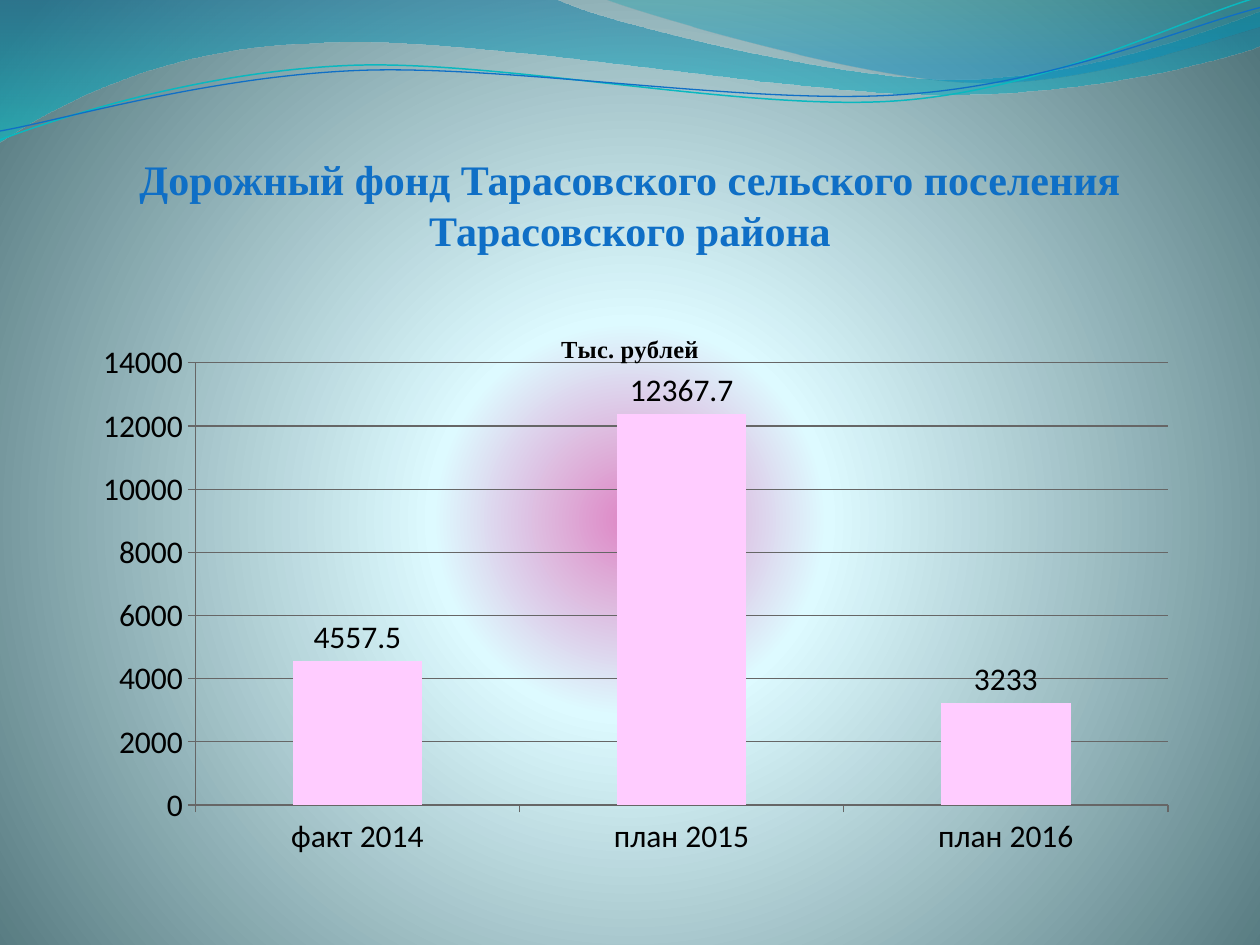
from lxml import etree
from pptx import Presentation
from pptx import util as u
from pptx.chart.data import CategoryChartData
from pptx.dml.color import RGBColor
from pptx.enum import chart as ch, text as tx
from pptx.oxml import parse_xml
from pptx.oxml.ns import nsdecls, qn

COLORS = {
    "title": "0F6FC6", "teal_line": "0AB8BF", "bar": "FFCCFF",
    "axis": "666666", "ink": "000000",
    "glow": "DE86C5", "ice": "DDFAFF", "edge": "52767C",
    "deep": "0074A1", "aqua": "00C6CF", "sea": "00A1A9", "sky": "008BBF",
}
INCH = 2.54  # centimetres

# Wave outlines in inches: a start point, then line ends (2 numbers)
# or cubic curves (6 numbers)
WIDE_WAVE = [
    (0, 0), (4.4, -0.01),
    (4.76, 0.17, 6.64, 0.63, 7.58, 0.63), (8.53, 0.63, 9.58, 0.26, 10, 0.09),
    (10.01, 0.36),
    (9.83, 0.44, 8.7, 0.76, 7.46, 0.75), (6.22, 0.75, 3.82, 0.28, 2.57, 0.34),
    (1.29, 0.36, 0.46, 0.83, -0.01, 1.13), (0, 0),
]
RIGHT_WAVE = [
    (4.79, -0.01),
    (5.09, 0.11, 6.82, 0.62, 7.69, 0.65), (8.56, 0.69, 9.61, 0.32, 10, 0.21),
    (10, 0), (4.79, -0.01),
]
TEAL_STRAND = [
    (0, 1.11), (0.48, 0.93, 1.58, 0.57, 2.77, 0.52),
    (3.95, 0.47, 5.93, 0.89, 7.13, 0.8), (8.33, 0.71, 9.38, 0.15, 9.98, -0.02),
]
BLUE_STRAND = [
    (0, 1.04), (0.47, 0.96, 1.64, 0.61, 2.83, 0.56),
    (4.03, 0.51, 5.97, 0.84, 7.17, 0.75), (8.36, 0.67, 9.41, 0.21, 10, 0.06),
]


def inches(value):
    return u.Cm(value * INCH)


def gradient(stops, direction):
    """Build a gradient fill from (position, colour, opacity) stops."""
    marks = "".join(
        f'<a:gs pos="{pos * 1000}"><a:srgbClr val="{COLORS[color]}">'
        f'<a:alpha val="{opacity * 1000}"/></a:srgbClr></a:gs>'
        for pos, color, opacity in stops)
    return parse_xml(f'<a:gradFill {nsdecls("a")} rotWithShape="1">'
                     f'<a:gsLst>{marks}</a:gsLst>{direction}</a:gradFill>')


def style_font(font, size=18, name="Calibri", color="ink", bold=False):
    font.size = u.Pt(size)
    font.name = name
    font.bold = bold
    font.color.rgb = RGBColor.from_string(COLORS[color])


def write(frame, words, align=tx.PP_ALIGN.CENTER, **style):
    """Put one formatted paragraph in a text frame."""
    para = frame.paragraphs[0]
    para.alignment = align
    span = para.add_run()
    span.text = words
    style_font(span.font, **style)


class Page:
    def __init__(self, deck):
        self.slide = deck.slides.add_slide(deck.slide_layouts[6])
        self.shapes = self.slide.shapes

    def background(self, stops):
        self.slide.background.fill.solid()
        holder = self.slide.element.find(".//" + qn("p:bgPr"))
        center = ('<a:path path="circle"><a:fillToRect l="10000" t="110000" '
                  'r="10000" b="100000"/></a:path>')
        holder.replace(holder.find(qn("a:solidFill")), gradient(stops, center))

    def outline(self, outline, closed):
        """Draw the anchors as a freeform, then bend its curved segments."""
        ends = [(inches(part[-2]), inches(part[-1])) for part in outline]
        builder = self.shapes.build_freeform(*ends[0])
        builder.add_line_segments(ends[1:], close=closed)
        shape = builder.convert_to_shape()
        shape.shadow.inherit = False
        segments = shape.element.findall(".//" + qn("a:lnTo"))
        for part, segment in zip(outline[1:], segments):
            if len(part) == 2:
                continue
            segment.tag = qn("a:cubicBezTo")
            for place, i in enumerate((0, 2)):
                point = etree.Element(
                    qn("a:pt"), x=str(inches(part[i]) - shape.left),
                    y=str(inches(part[i + 1]) - shape.top))
                segment.insert(place, point)
        return shape

    def wave(self, outline, stops):
        shape = self.outline(outline, True)
        shape.line.fill.background()
        shape.fill.solid()
        properties = shape.element.spPr
        properties.replace(properties.find(qn("a:solidFill")),
                           gradient(stops, '<a:lin ang="5400000" scaled="0"/>'))

    def strand(self, outline, color, width):
        shape = self.outline(outline, False)
        shape.fill.background()
        shape.line.width = u.Pt(width)
        shape.line.color.rgb = RGBColor.from_string(COLORS[color])

    def title(self, words, place, **style):
        frame = self.shapes.add_textbox(*map(inches, place)).text_frame
        frame.word_wrap = True
        frame.vertical_anchor = tx.MSO_ANCHOR.BOTTOM
        frame.margin_left = frame.margin_right = frame.margin_bottom = 0
        frame.margin_top = inches(0.05)
        write(frame, words, **style)

    def columns(self, heading, values, place, plot):
        data = CategoryChartData()
        data.categories = list(values)
        data.add_series("Series 1", list(values.values()))
        chart = self.shapes.add_chart(ch.XL_CHART_TYPE.COLUMN_CLUSTERED,
                                      *map(inches, place), data).chart
        style_font(chart.font)
        chart.has_legend = False
        chart.has_title = True
        write(chart.chart_title.text_frame, heading,
              size=14, name="Times New Roman", bold=True)

        # Axes and gridlines
        scale = chart.value_axis
        scale.has_major_gridlines = True
        for axis in (chart.category_axis, scale):
            axis.major_tick_mark = ch.XL_TICK_MARK.OUTSIDE
        for line in (chart.category_axis.format.line, scale.format.line,
                     scale.major_gridlines.format.line):
            line.width = u.Pt(0.75)
            line.color.rgb = RGBColor.from_string(COLORS["axis"])

        # Bars and their labels
        bars = chart.plots[0]
        bars.vary_by_categories = False
        bars.gap_width = 150
        series = bars.series[0]
        fills = [(series, "title")]
        fills += [(series.points[i], "bar") for i in range(len(values))]
        for part, color in fills:
            part.format.fill.solid()
            part.format.fill.fore_color.rgb = RGBColor.from_string(COLORS[color])
        labels = series.data_labels
        labels.show_value = True
        labels.position = ch.XL_LABEL_POSITION.OUTSIDE_END
        style_font(labels.font)

        # Fixed inner plot area, as shares of the chart's size
        area = chart.element.find(".//" + qn("c:plotArea"))
        for old in area.findall(qn("c:layout")):
            area.remove(old)
        layout = etree.Element(qn("c:layout"))
        manual = etree.SubElement(layout, qn("c:manualLayout"))
        shares = [part / whole for part, whole in zip(plot, place[2:] * 2)]
        settings = [("layoutTarget", "inner"), ("xMode", "edge"),
                    ("yMode", "edge"), *zip("xywh", shares)]
        for tag, value in settings:
            etree.SubElement(manual, qn("c:" + tag), val=str(value))
        area.insert(0, layout)


def main():
    deck = Presentation()
    deck.slide_width, deck.slide_height = inches(10), inches(7.5)
    page = Page(deck)

    # Backdrop and waves
    page.background([(0, "glow", 100), (25, "ice", 100), (100, "edge", 100)])
    page.wave(WIDE_WAVE, [(0, "deep", 45), (100, "aqua", 55)])
    page.wave(RIGHT_WAVE, [(0, "sea", 30), (80, "sky", 45)])
    page.strand(TEAL_STRAND, "teal_line", 0.85)
    page.strand(BLUE_STRAND, "title", 0.75)

    # Heading and chart
    page.title("Дорожный фонд Тарасовского сельского поселения Тарасовского района",
               (0.5, 0.77, 9, 1.25),
               size=24, name="Times New Roman", color="title", bold=True)
    page.columns("Тыс. рублей",
                 {"факт 2014": 4557.5, "план 2015": 12367.7, "план 2016": 3233},
                 place=(0.5, 2.46, 9, 4.73), plot=(1.05, 0.42, 7.72, 3.51))
    deck.save("out.pptx")


if __name__ == "__main__":
    main()
